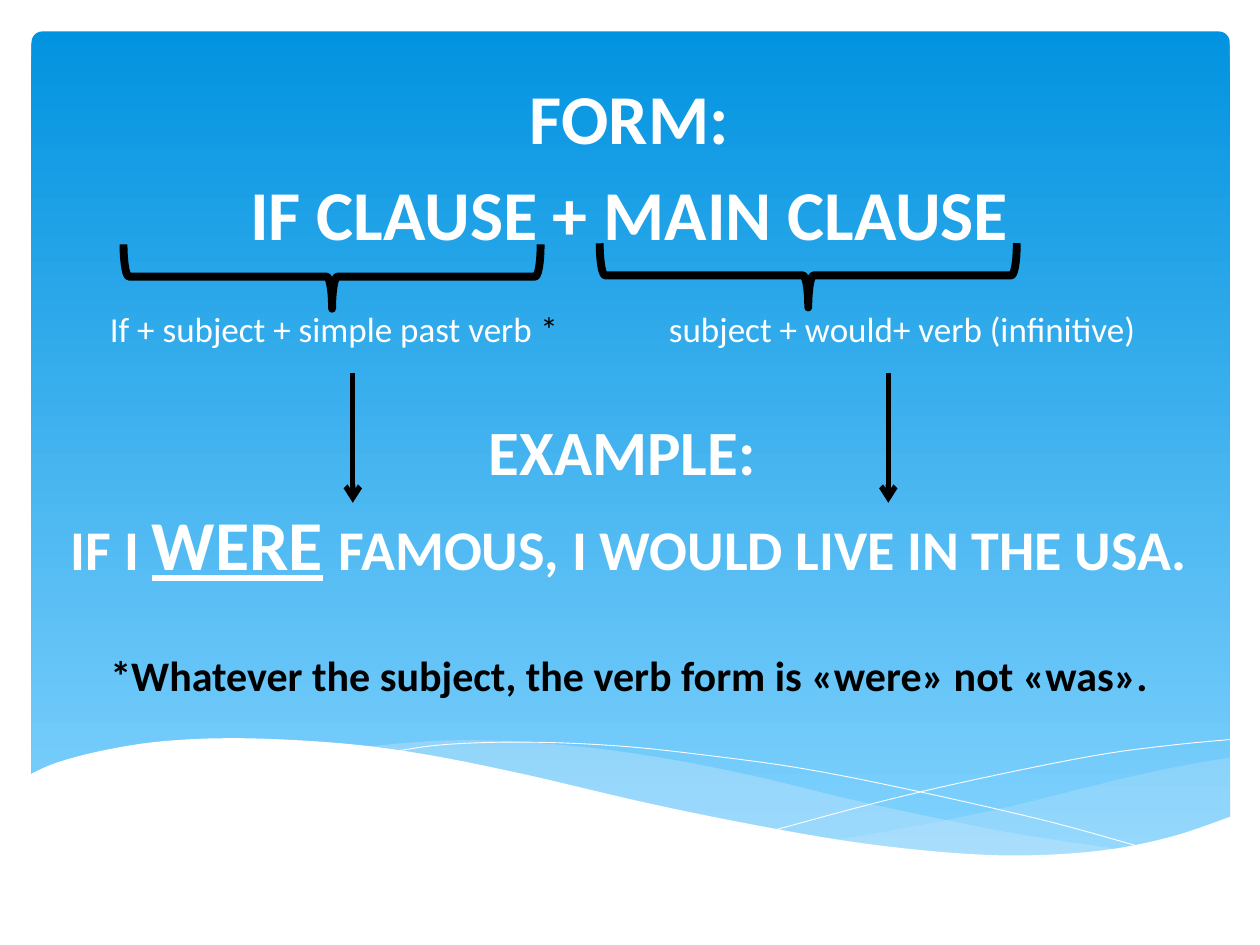
from lxml.etree import SubElement
from pptx import Presentation
from pptx.dml.color import RGBColor
from pptx.enum.shapes import MSO_CONNECTOR as Connector, MSO_SHAPE as Shape
from pptx.enum.text import PP_ALIGN as Align
from pptx.oxml.ns import qn
from pptx.util import Pt

WHITE, BLACK = "FFFFFF", "000000"
SKY_TOP, SKY_BOTTOM, MIST = "0293E0", "83D3FE", "C6E7FC"


def color(hex_string):
    return RGBColor.from_string(hex_string)


def smooth_curve(knots, steps=5):
    """Catmull-Rom curve through the knots."""
    ends = [knots[0], *knots, knots[-1]]
    points = [knots[0]]
    for a, b, c, d in zip(ends, ends[1:], ends[2:], ends[3:]):
        for i in range(1, steps + 1):
            t = i / steps
            points.append(tuple(
                (2 * q + (r - p) * t + (2 * p - 5 * q + 4 * r - s) * t ** 2
                 + (3 * q - p - 3 * r + s) * t ** 3) / 2
                for p, q, r, s in zip(a, b, c, d)))
    return points


class SlideMaker:
    font = "Calibri"

    def __init__(self, slide):
        self.s = slide

    def sky(self, x, y, w, h):
        sp = self.s.shapes.add_shape(Shape.ROUNDED_RECTANGLE, Pt(x), Pt(y), Pt(w), Pt(h))
        sp.shadow.inherit = False
        sp.adjustments[0] = 0.013
        sp.line.fill.background()
        sp.fill.gradient()
        sp.fill.gradient_angle = 270
        for stop, position, shade in zip(sp.fill.gradient_stops, (0, 1), (SKY_TOP, SKY_BOTTOM)):
            stop.position = position
            stop.color.rgb = color(shade)

    def outline(self, points, closed):
        points = [(Pt(x), Pt(y)) for x, y in points]
        builder = self.s.shapes.build_freeform(*points[0])
        builder.add_line_segments(points[1:], close=closed)
        sp = builder.convert_to_shape()
        sp.shadow.inherit = False
        return sp

    def wave(self, points, fill, opacity=100):
        sp = self.outline(points, True)
        sp.line.fill.background()
        sp.fill.solid()
        sp.fill.fore_color.rgb = color(fill)
        if opacity < 100:
            clr = sp.fill._xPr.find(qn("a:solidFill"))[0]
            SubElement(clr, qn("a:alpha")).set("val", str(opacity * 1000))

    def ripple(self, knots):
        sp = self.outline(smooth_curve(knots), False)
        sp.fill.background()
        sp.line.color.rgb = color(WHITE)
        sp.line.width = Pt(0.5)

    def text_box(self, x, y, w, h):
        tf = self.s.shapes.add_textbox(Pt(x), Pt(y), Pt(w), Pt(h)).text_frame
        tf.word_wrap = True
        return tf

    def paragraph(self, p, runs, size, before=0, bold=True, shade=WHITE, tabs=()):
        """Each run is (text, its own font settings)."""
        p.alignment = Align.LEFT if tabs else Align.CENTER
        p.space_before = Pt(before)
        if tabs:
            tab_list = SubElement(p._p.get_or_add_pPr(), qn("a:tabLst"))
            for stop in tabs:
                SubElement(tab_list, qn("a:tab"), pos=str(Pt(stop)), algn="l")
        for text, own in runs:
            r = p.add_run()
            r.text = text
            r.font.name = self.font
            r.font.bold = bold
            r.font.size = Pt(own.get("size", size))
            r.font.color.rgb = color(own.get("shade", shade))
            if own.get("underline"):
                r.font.underline = True

    def brace(self, x, y, w, h):
        sp = self.s.shapes.add_shape(Shape.LEFT_BRACE, Pt(x), Pt(y), Pt(w), Pt(h))
        sp.shadow.inherit = False
        sp.rotation = 270
        sp.fill.background()
        sp.line.color.rgb = color(BLACK)
        sp.line.width = Pt(4.5)

    def down_arrow(self, x, top, bottom):
        c = self.s.shapes.add_connector(Connector.STRAIGHT, Pt(x), Pt(top), Pt(x), Pt(bottom))
        c.line.color.rgb = color(BLACK)
        c.line.width = Pt(3)
        SubElement(c.line._get_or_add_ln(), qn("a:tailEnd"), type="arrow")
        SubElement(c._element.spPr, qn("a:effectLst"))


def main():
    prs = Presentation()
    prs.slide_width, prs.slide_height = Pt(720), Pt(540)
    m = SlideMaker(prs.slides.add_slide(prs.slide_layouts[6]))

    # Background sky
    m.sky(18, 18, 684.7, 475.2)

    # Translucent waves: upper edge, then lower edge
    right_top = [(703.4, 432.7), (663.8, 439.9), (620.6, 450), (580.3, 460.1),
                 (525.6, 471.6), (476.6, 480.2)]
    right_bottom = [(476.6, 480.2), (517.7, 485.3), (554.4, 488.9), (586.8, 489.6),
                    (622.1, 487.4), (653, 483.1), (679.7, 475.9), (703.4, 467.3)]
    left_top = [(643.7, 486), (581.8, 476.6), (534.2, 467.3), (481.7, 455.8),
                (431.3, 443.5), (380.2, 433.4), (334.8, 427), (288, 423.4),
                (247.7, 423.4), (206.6, 427)]
    left_bottom = [(206.6, 427), (261.4, 435.6), (324, 449.3), (381.6, 462.2),
                   (445.7, 475.2), (501.1, 483.8), (557.3, 488.9), (596.9, 489.6),
                   (643.7, 486)]
    m.wave(smooth_curve(right_top) + smooth_curve(right_bottom), MIST, 29)
    m.wave(smooth_curve(left_top) + smooth_curve(left_bottom), MIST, 40)

    # Thin ripples
    m.ripple([(223.2, 429.8), (254.2, 425.5), (300.2, 424.1), (352.1, 426.2), (401, 431.3),
              (458.6, 439.2), (524.2, 452.2), (599, 469.4), (653.8, 484.6)])
    m.ripple([(442.1, 474.5), (501.1, 458.6), (559.4, 445), (624.2, 432),
              (666, 426.2), (702.7, 422.6)])

    # White foreground wave
    shore = [(703.4, 466.6), (669.6, 478.1), (630, 486), (582.5, 488.9), (535.7, 486.7),
             (481, 480.2), (416.9, 468.7), (362.2, 457.2), (301, 442.8), (244.1, 431.3),
             (195.1, 424.8), (139, 421.9), (95, 423.4), (61.2, 428.4), (33.1, 435.6),
             (16.6, 442.8)]
    m.wave(smooth_curve(shore) + [(16.6, 526.3), (703.4, 526.3)], WHITE)

    # Grammar text
    tf = m.text_box(19.4, 39, 680.4, 446)
    m.paragraph(tf.paragraphs[0], [("FORM:", {})], 40)
    m.paragraph(tf.add_paragraph(), [("IF CLAUSE + MAIN CLAUSE", {})], 40, before=7)
    m.paragraph(tf.add_paragraph(),
                [("\tIf + subject + simple past verb ", {}), ("*", {"shade": BLACK}),
                 ("\tsubject + would+ verb (infinitive)", {})],
                20, before=30, bold=False, tabs=(36.25, 355.75))
    m.paragraph(tf.add_paragraph(), [("EXAMPLE: ", {})], 36, before=36)
    m.paragraph(tf.add_paragraph(),
                [("IF I ", {}), ("WERE", {"size": 40, "underline": True}),
                 (" ", {"size": 40}), ("FAMOUS, I WOULD LIVE IN THE USA.", {})],
                32, before=7.5)
    m.paragraph(tf.add_paragraph(),
                [("*Whatever the subject, the verb form is «were» not «was».", {})],
                24, before=37, shade=BLACK)

    # Braces under the clauses, arrows to the example
    for x, y in ((171.4, 38.9), (443.5, 38.2)):
        m.brace(x, y, 36.7, 238.3)
    for x in (201.6, 507.6):
        m.down_arrow(x, 213.1, 287.3)

    prs.save("out.pptx")


if __name__ == "__main__":
    main()
